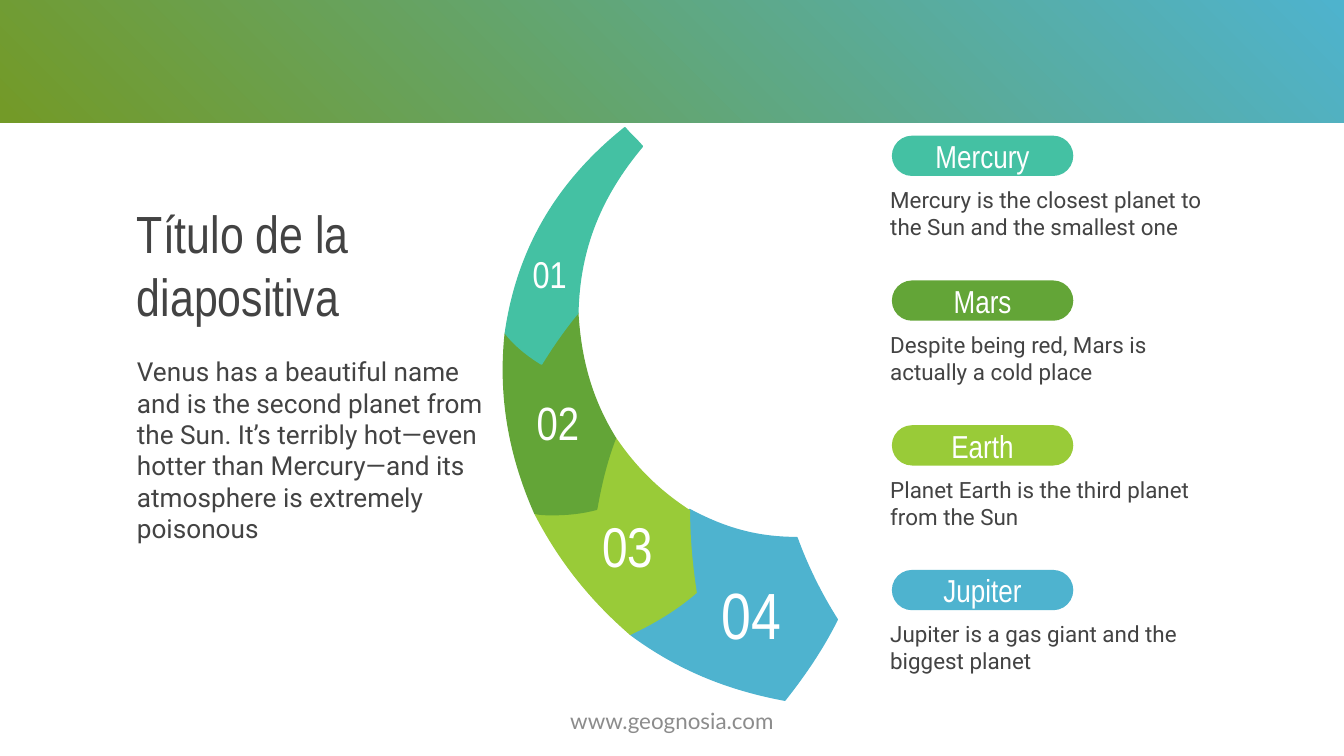
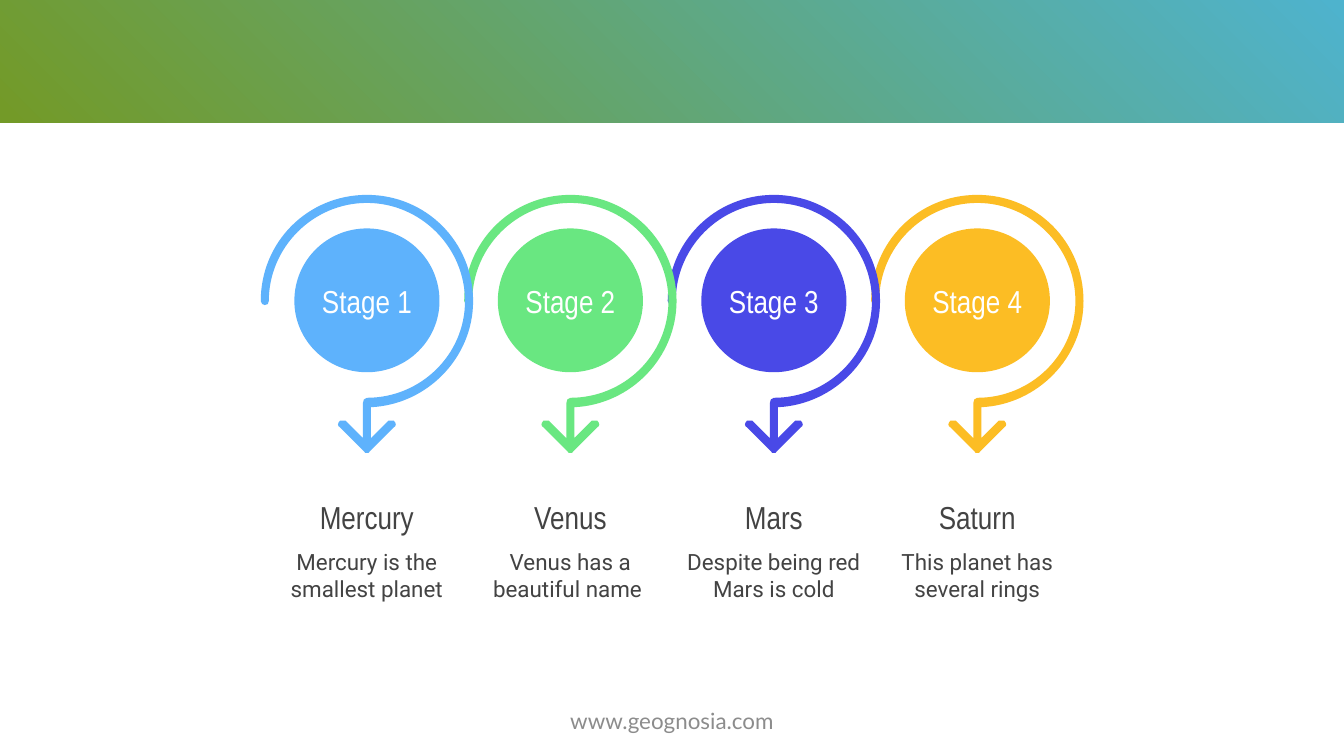
"""Build two slides: a curved four-part arrow and a row of four stages."""
import pptx
import pptx.dml.color
import pptx.enum.shapes
import pptx.enum.text
import pptx.oxml
import pptx.oxml.ns
import pptx.util

RGB = pptx.dml.color.RGBColor
KIND = pptx.enum.shapes.MSO_SHAPE
ALIGN = pptx.enum.text.PP_ALIGN
ANCHOR = pptx.enum.text.MSO_ANCHOR

SCALE = 9144
HEAD, BODY, FOOT = "Arial Narrow", "Roboto", "Lato"

WHITE = RGB(0xFF, 0xFF, 0xFF)
DARK = RGB(0x43, 0x43, 0x43)
GRAY = RGB(0x8C, 0x8C, 0x8C)
OLIVE = RGB(0x73, 0x9A, 0x28)
TEAL = RGB(0x44, 0xC1, 0xA3)
GREEN = RGB(0x63, 0xA5, 0x37)
LIME = RGB(0x99, 0xCB, 0x38)
CYAN = RGB(0x4E, 0xB3, 0xCF)
SKY = RGB(0x5E, 0xB2, 0xFC)
MINT = RGB(0x69, 0xE7, 0x81)
INDIGO = RGB(0x49, 0x49, 0xE7)
AMBER = RGB(0xFC, 0xBD, 0x24)

SITE = "www.geognosia.com"
TITLE = "Título de la diapositiva"
INTRO = ("Venus has a beautiful name and is the second planet from the Sun. "
         "It’s terribly hot—even hotter than Mercury—and its atmosphere is "
         "extremely poisonous")

PLANETS = [
    ("Mercury", "Mercury is the closest planet to the Sun and the smallest one", TEAL),
    ("Mars", "Despite being red, Mars is actually a cold place", GREEN),
    ("Earth", "Planet Earth is the third planet from the Sun", LIME),
    ("Jupiter", "Jupiter is a gas giant and the biggest planet", CYAN),
]

# Each path starts with a point; two numbers make a line, six a curve.
PARTS = [
    ("01", 20, (363, 171), TEAL, [
        (465, 95), (415, 135, 385, 185, 376, 248), (383, 257, 393, 265, 403, 271),
        (411, 258, 420, 245, 430, 233), (431, 185, 447, 146, 478, 109),
        (473, 103, 470, 101, 465, 95)]),
    ("02", 25, (369, 281), GREEN, [
        (430, 233), (420, 245, 411, 258, 403, 271), (393, 265, 383, 257, 376, 248),
        (371, 295, 379, 339, 398, 382), (402, 383, 407, 383, 411, 383),
        (422, 383, 433, 382, 444, 379), (447, 362, 451, 344, 458, 326),
        (440, 297, 432, 267, 430, 233)]),
    ("03", 30, (421, 373), LIME, [
        (458, 326), (452, 343, 447, 361, 444, 379), (433, 382, 422, 383, 411, 383),
        (407, 383, 402, 383, 398, 382), (416, 417, 439, 446, 469, 472),
        (486, 464, 503, 454, 518, 441), (515, 421, 513, 401, 513, 380),
        (490, 365, 473, 348, 458, 326)]),
    ("04", 35, (513, 424), CYAN, [
        (513, 379), (513, 401, 515, 421, 518, 441), (503, 454, 486, 464, 469, 472),
        (504, 498, 541, 513, 584, 521), (599, 502, 612, 483, 623, 461),
        (611, 442, 601, 422, 593, 400), (563, 400, 539, 393, 513, 379)]),
]

STAGES = [
    ("Stage 1", "Mercury", "Mercury is the smallest planet", SKY),
    ("Stage 2", "Venus", "Venus has a beautiful name ", MINT),
    ("Stage 3", "Mars", "Despite being red Mars is cold", INDIGO),
    ("Stage 4", "Saturn", "This planet has several rings", AMBER),
]

RING = [
    (0, -79), (-44, -79, -79, -44, -79, 0), (-79, 2, -77, 3, -76, 3),
    (-74, 3, -73, 2, -73, 0), (-73, -40, -40, -73, 0, -73),
    (40, -73, 73, -40, 73, 0), (73, 40, 40, 72, 0, 72), (-2, 72, -3, 74, -3, 76),
    (-3, 102), (-16, 89), (-17, 89, -17, 89, -18, 89), (-19, 89, -20, 89, -20, 89),
    (-22, 91, -22, 93, -20, 94), (-2, 112), (-2, 113, -1, 113, 0, 113),
    (1, 113, 2, 113, 2, 112), (20, 94), (22, 93, 22, 91, 20, 89),
    (20, 89, 19, 89, 18, 89), (17, 89, 17, 89, 16, 89), (3, 102), (3, 79),
    (45, 77, 79, 42, 79, 0), (79, -44, 44, -79, 0, -79),
]
DISC = [
    (0, -54), (-30, -54, -54, -30, -54, 0), (-54, 29, -30, 53, 0, 53),
    (30, 53, 54, 29, 54, 0), (54, -30, 30, -54, 0, -54),
]


def px(num):
    return pptx.util.Emu(round(num * SCALE))


def paint(shape, color, edge=False):
    shape.shadow.inherit = False
    shape.fill.solid()
    shape.fill.fore_color.rgb = color
    if edge:
        shape.line.color.rgb = color
        shape.line.width = pptx.util.Pt(0.75)
    else:
        shape.line.fill.background()


def write(shape, text, font, size, color, mid=True, center=True, inset=10):
    frame = shape.text_frame
    frame.word_wrap = True
    frame.margin_left = frame.margin_right = px(10)
    frame.margin_top = frame.margin_bottom = px(inset)
    frame.vertical_anchor = ANCHOR.MIDDLE if mid else ANCHOR.TOP
    para = frame.paragraphs[0]
    para.alignment = ALIGN.CENTER if center else ALIGN.LEFT
    run = para.add_run()
    run.text = text
    run.font.name = font
    run.font.size = pptx.util.Pt(size)
    run.font.color.rgb = color


def label(slide, box, *args, **opts):
    write(slide.shapes.add_textbox(*map(px, box)), *args, **opts)


def bend(shape, path):
    """Merge the three lines laid for each curve into one cubic curve."""
    name = pptx.oxml.ns.qn
    lines = iter(list(shape.element.iter(name("a:lnTo"))))
    for seg in path[1:]:
        first = next(lines)
        if len(seg) == 6:
            first.tag = name("a:cubicBezTo")
            for line in (next(lines), next(lines)):
                first.append(line[0])
                line.getparent().remove(line)


def outline(slide, path, color, shift=(0, 0), edge=False):
    dots = [(px(seg[k] + shift[0]), px(seg[k + 1] + shift[1]))
            for seg in path for k in range(0, len(seg), 2)]
    pen = slide.shapes.build_freeform(*dots[0])
    pen.add_line_segments(dots[1:], close=False)
    shape = pen.convert_to_shape()
    bend(shape, path)
    track = next(shape.element.iter(pptx.oxml.ns.qn("a:path")))
    track.append(pptx.oxml.parse_xml(
        f'<a:close {pptx.oxml.ns.nsdecls("a")}/>'))
    paint(shape, color, edge)
    return shape


def start(deck):
    slide = deck.slides.add_slide(deck.slide_layouts[6])
    band = slide.shapes.add_shape(KIND.RECTANGLE, *map(px, (-4, -5, 1008, 96.5)))
    band.shadow.inherit = False
    band.line.fill.background()
    band.fill.gradient()
    band.fill.gradient_angle = 45
    for stop, spot, color in zip(band.fill.gradient_stops, (0.01, 1), (OLIVE, CYAN)):
        stop.position = spot
        stop.color.rgb = color
    return slide


def finish(slide):
    label(slide, (331, 521, 338, 30), SITE, FOOT, 12, GRAY, inset=5)


def curve(deck):
    slide = start(deck)
    for text, size, spot, color, path in reversed(PARTS):
        outline(slide, path, color, edge=True)
        label(slide, (*spot, 92, 65), text, HEAD, size, WHITE)
    for row, (name, fact, color) in enumerate(PLANETS):
        top = 101 + row * 107.7
        label(slide, (652.5, top + 27.6, 255, 58), fact, BODY, 12, DARK,
              mid=False, center=False)
        pill = slide.shapes.add_shape(KIND.ROUNDED_RECTANGLE,
                                      *map(px, (663.6, top, 135, 30)))
        pill.adjustments[0] = 0.5
        paint(pill, color)
        write(pill, name, HEAD, 17, WHITE)
    label(slide, (92, 150, 272, 93), TITLE, HEAD, 28, DARK, center=False)
    label(slide, (92, 254.6, 288, 158), INTRO, BODY, 14, DARK, mid=False, center=False)
    finish(slide)


def stages(deck):
    slide = start(deck)
    for col, (stage, name, fact, color) in reversed(list(enumerate(STAGES))):
        mid = 273 + col * 151.4
        outline(slide, RING, color, (mid, 224))
        disc = outline(slide, DISC, color, (mid, 224))
        write(disc, stage, HEAD, 17, WHITE)
        label(slide, (mid - 85, 399, 170, 58), fact, BODY, 12, DARK)
        label(slide, (mid - 85, 361, 170, 47), name, HEAD, 17, DARK)
    finish(slide)


def main():
    deck = pptx.Presentation()
    deck.slide_width, deck.slide_height = px(1000), px(562.5)
    curve(deck)
    stages(deck)
    deck.save("out.pptx")


if __name__ == "__main__":
    main()
